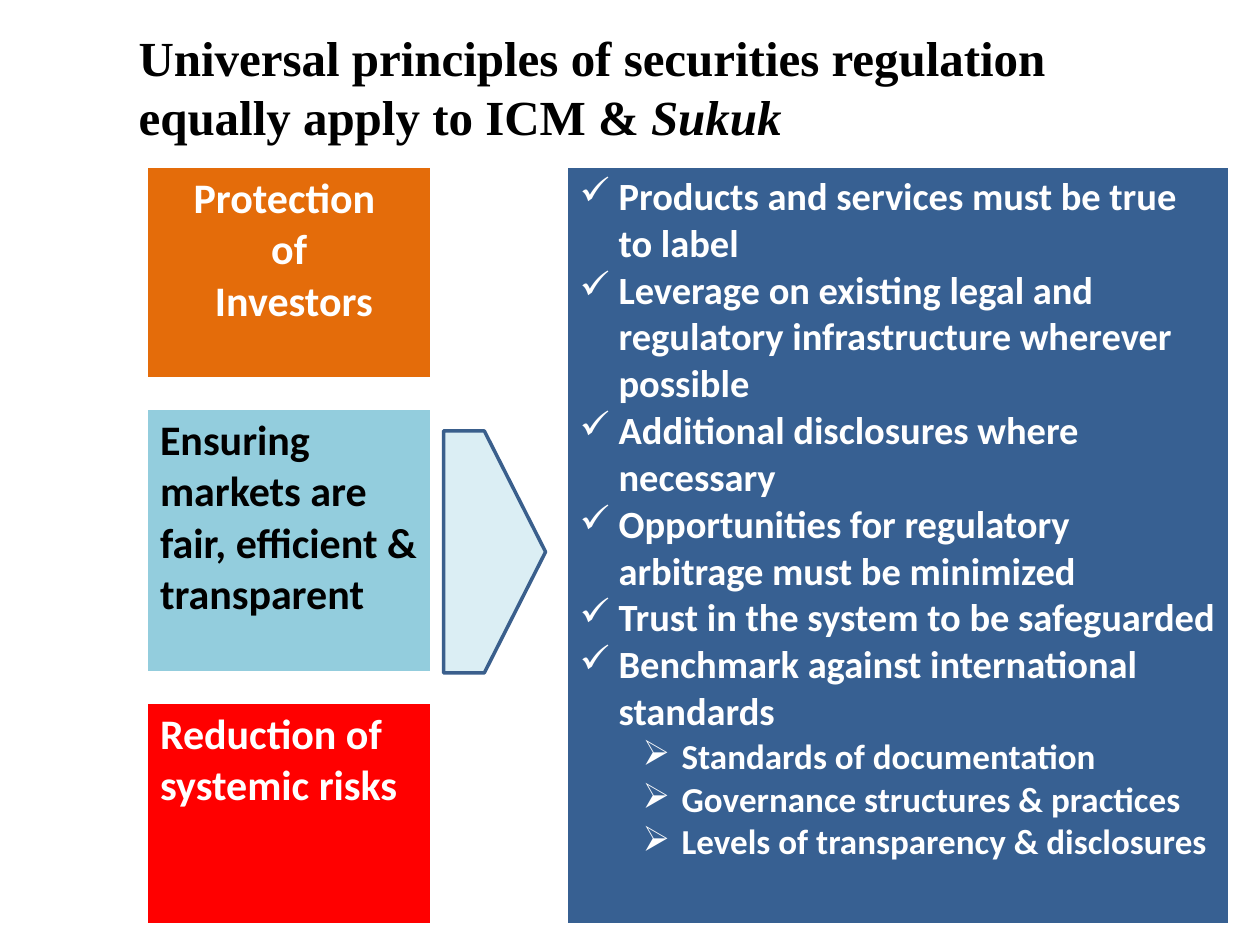
from lxml.etree import SubElement
from pptx import Presentation
from pptx.dml.color import RGBColor
from pptx.enum.shapes import MSO_SHAPE as Shape
from pptx.enum.text import MSO_ANCHOR as Anchor, MSO_AUTO_SIZE as AutoSize, PP_ALIGN as Align
from pptx.oxml.ns import qn
from pptx.util import Pt

PX = 9144  # EMU in one px, 100 px to the inch
COLORS = {
    "black": "000000", "white": "FFFFFF", "orange": "E46C0A", "aqua": "93CDDD",
    "red": "FF0000", "navy": "376092", "pale": "DBEEF4", "outline": "3A5F8C",
}
GOALS = [  # top, height, fill, text colour, alignment, paragraphs
    (133, 167, "orange", "white", Align.CENTER, ["Protection ", "of", " Investors"]),
    (325, 208, "aqua", "black", Align.LEFT,
     ["Ensuring markets are fair, efficient &", "transparent"]),
    (558, 175, "red", "white", Align.LEFT, ["Reduction of systemic risks"]),
]
PRINCIPLES = [
    "Products and services must be true to label",
    "Leverage on existing legal and regulatory infrastructure wherever possible",
    "Additional disclosures where necessary",
    "Opportunities for regulatory arbitrage must be minimized",
    "Trust in the system to be safeguarded",
    "Benchmark against international standards",
]
BENCHMARKS = [
    "Standards of documentation",
    "Governance structures & practices",
    "Levels of transparency & disclosures",
]
LEVELS = [  # bullet, left indent, text size
    ("✓", 31, 22),
    ("➢", 81, 20),
]
HANGING = 31


def rgb(name):
    return RGBColor.from_string(COLORS[name])


def emu(box):
    return [round(length * PX) for length in box]


def add_run(paragraph, text, color, size, font="Calibri", italic=None):
    run = paragraph.add_run()
    run.text = text
    style = {"name": font, "size": Pt(size), "bold": True, "italic": italic}
    for key, value in style.items():
        setattr(run.font, key, value)
    run.font.color.rgb = rgb(color)


def add_paragraphs(frame, count):
    return [frame.paragraphs[0]] + [frame.add_paragraph() for _ in range(count - 1)]


def add_panel(slide, box, fill):
    """Add a one-cell table and return its text frame."""
    cell = slide.shapes.add_table(1, 1, *emu(box)).table.cell(0, 0)
    cell.fill.solid()
    cell.fill.fore_color.rgb = rgb(fill)
    return cell.text_frame


def set_bullet(paragraph, level):
    mark, indent, _ = LEVELS[level]
    paragraph.level = level
    properties = paragraph._p.get_or_add_pPr()
    properties.set("marL", str(indent * PX))
    properties.set("indent", str(-HANGING * PX))
    SubElement(properties, qn("a:buChar"), char=mark)


def add_title(slide, box):
    title = slide.shapes.title
    title.left, title.top, title.width, title.height = emu(box)
    frame = title.text_frame
    layout = {"word_wrap": True, "vertical_anchor": Anchor.TOP,
              "auto_size": AutoSize.SHAPE_TO_FIT_TEXT}
    for key, value in layout.items():
        setattr(frame, key, value)
    heading = frame.paragraphs[0]
    heading.alignment = Align.LEFT
    add_run(heading, "Universal principles of securities regulation equally apply to ICM & ",
            "black", 28, "Times New Roman")
    add_run(heading, "Sukuk", "black", 28, "Times New Roman", italic=True)


def add_goals(slide, left, width):
    for top, height, fill, color, alignment, lines in GOALS:
        frame = add_panel(slide, (left, top, width, height), fill)
        for paragraph, line in zip(add_paragraphs(frame, len(lines)), lines):
            paragraph.alignment = alignment
            add_run(paragraph, line, color, 24)


def add_pointer(slide, box):
    pointer = slide.shapes.add_shape(Shape.PENTAGON, *emu(box))
    pointer.shadow.inherit = False
    pointer.adjustments[0] = 0.6
    pointer.fill.solid()
    pointer.fill.fore_color.rgb = rgb("pale")
    pointer.line.color.rgb = rgb("outline")
    pointer.line.width = Pt(2)


def add_principles(slide, box):
    items = [(0, text) for text in PRINCIPLES] + [(1, text) for text in BENCHMARKS]
    frame = add_panel(slide, box, "navy")
    for paragraph, (level, text) in zip(add_paragraphs(frame, len(items)), items):
        set_bullet(paragraph, level)
        add_run(paragraph, text, "white", LEVELS[level][2])


def main():
    deck = Presentation()
    deck.slide_width, deck.slide_height = emu((1000, 750))
    slide = deck.slides.add_slide(deck.slide_layouts[5])
    add_title(slide, (100, 17, 850, 104))
    add_goals(slide, 117, 225)
    add_pointer(slide, (352, 342, 81, 192))
    add_principles(slide, (450, 133, 525, 600))
    deck.save("out.pptx")


if __name__ == "__main__":
    main()
